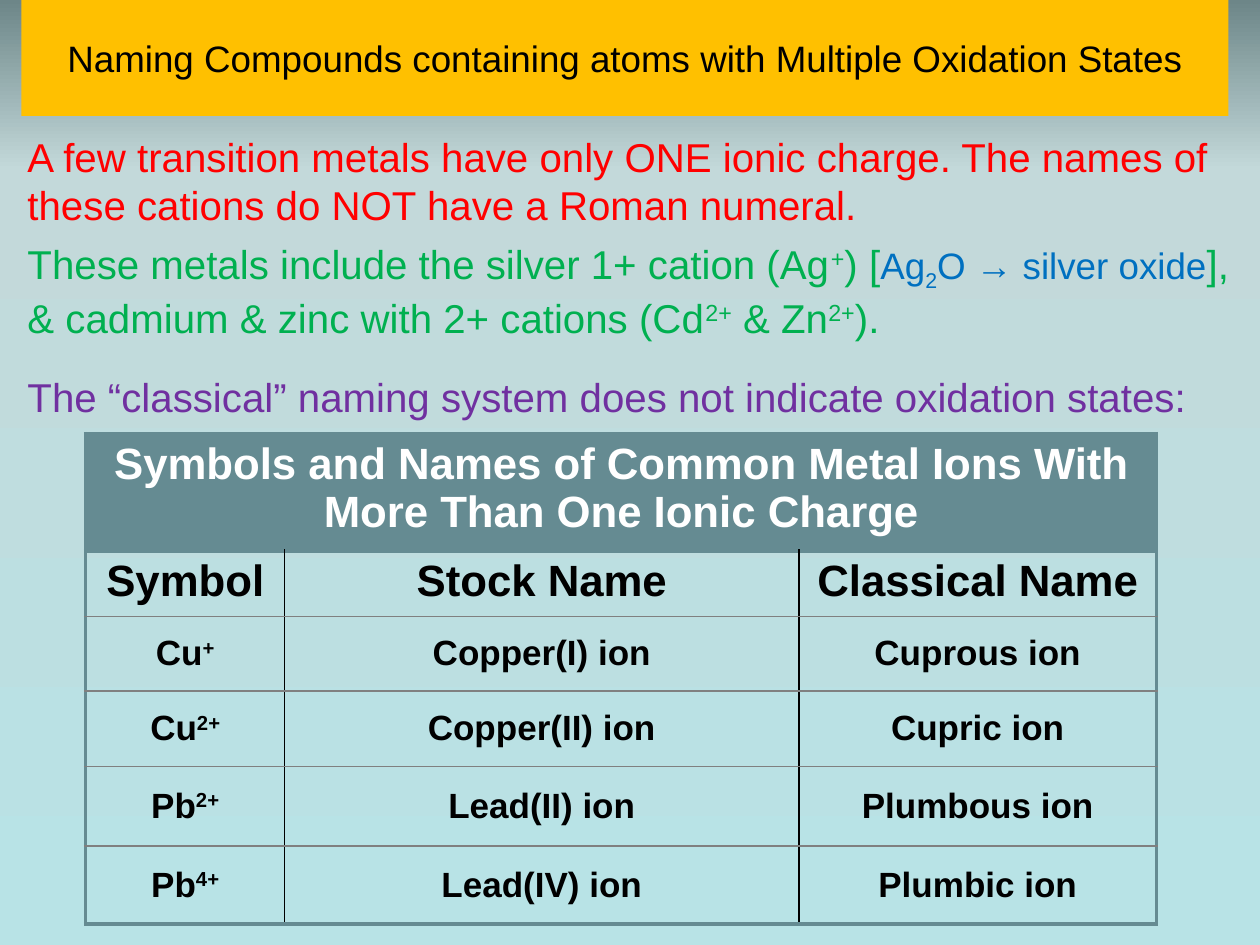
from copy import deepcopy

from lxml.etree import SubElement
from pptx import Presentation
from pptx.dml.color import RGBColor
from pptx.enum.text import MSO_ANCHOR, MSO_AUTO_SIZE, PP_ALIGN
from pptx.oxml.ns import qn
from pptx.util import Inches, Pt

COLORS = {
    "top": "6D8688", "haze": "C3D9DA", "base": "B8E3E6",
    "gold": "FFC000", "black": "000000", "white": "FFFFFF",
    "red": "FF0000", "green": "00B050", "blue": "0070C0",
    "purple": "7030A0", "teal": "658B92", "gray": "808080",
}
TITLE = "Naming Compounds containing atoms with Multiple Oxidation States"
UP, DOWN = 30, -25
BIG, SMALL = {"size": 23}, {"size": 21}
# Each paragraph: colour, space before, runs of (text, baseline, changes)
NOTES = [
    ("red", 0, [("A few transition metals have only ONE ionic charge. "
                 "The names of these cations do NOT have a Roman numeral.",)]),
    ("green", 6, [
        ("These metals include the silver 1+ cation (Ag",), ("+", UP), (") [",),
        ("Ag", 0, "blue"), ("2", DOWN, "blue"), ("O → silver oxide", 0, "blue"),
        ("], & cadmium & zinc with 2+ cations (Cd",), ("2+", UP),
        (" & Zn",), ("2+", UP), (").",)]),
    ("purple", 18, [("The “classical” naming system does not indicate "
                     "oxidation states:",)]),
]
HEAD = "Symbols and Names of Common Metal Ions With More Than One Ionic Charge"
LABELS = ["Symbol", "Stock Name", "Classical Name"]
IONS = [
    ("Cu", "+", "Copper(I) ion", "Cuprous ion"),
    ("Cu", "2+", "Copper(II) ion", "Cupric ion"),
    ("Pb", "2+", "Lead(II) ion", "Plumbous ion"),
    ("Pb", "4+", "Lead(IV) ion", "Plumbic ion"),
]
WIDTHS = [1.58, 4.08, 2.84]
HEIGHTS = [0.93, 0.52, 0.59, 0.6, 0.63, 0.62]


def rgb(name):
    return RGBColor.from_string(COLORS[name])


def add_run(para, text, color, base=0, **style):
    run = para.add_run()
    run.text = text
    for key, value in {"name": "Arial", "bold": False, **style}.items():
        setattr(run.font, key, Pt(value) if key == "size" else value)
    run.font.color.rgb = rgb(color)
    if base:
        run._r.get_or_add_rPr().set("baseline", str(base * 1000))


def paint_back(slide):
    """Fill the background with a three-stop gradient, top to bottom."""
    fill = slide.background.fill
    fill.gradient()
    fill.gradient_angle = 270
    stops = fill._fill._gradFill.find(qn("a:gsLst"))
    stops.append(deepcopy(stops[-1]))
    tints = [(0, "top"), (0.18, "haze"), (1, "base")]
    for stop, (spot, name) in zip(fill.gradient_stops, tints):
        stop.position = spot
        stop.color.rgb = rgb(name)


def set_title(slide):
    title = slide.shapes.title
    place = {"left": 0.17, "top": 0, "width": 9.58, "height": 0.92}
    for key, value in place.items():
        setattr(title, key, Inches(value))
    title.fill.solid()
    title.fill.fore_color.rgb = rgb("gold")
    frame = title.text_frame
    frame.auto_size = MSO_AUTO_SIZE.NONE
    frame.vertical_anchor = MSO_ANCHOR.MIDDLE
    para = frame.paragraphs[0]
    para.alignment = PP_ALIGN.CENTER
    add_run(para, TITLE, "black", **SMALL)


def add_notes(slide):
    box = slide.shapes.add_textbox(0, Inches(1), Inches(10), Inches(2.42))
    frame = box.text_frame
    frame.word_wrap = True
    for i, (color, gap, runs) in enumerate(NOTES):
        para = frame.add_paragraph() if i else frame.paragraphs[0]
        para.space_before = Pt(gap)
        para._p.get_or_add_pPr().set("marL", str(Inches(0.12)))
        for text, base, tint in (r + (0, color)[len(r) - 1:] for r in runs):
            size = SMALL if tint == "blue" else BIG
            add_run(para, text, tint, base, **size)


def set_edges(cell, edges):
    """Draw the cell borders; edges maps a side to a colour and a width."""
    props = cell._tc.get_or_add_tcPr()
    for i, side in enumerate("LRTB"):
        color, width = edges[side]
        line = SubElement(props, qn(f"a:ln{side}"), w=str(Pt(width)))
        paint = SubElement(line, qn("a:solidFill"))
        SubElement(paint, qn("a:srgbClr"), val=COLORS[color])
        props.insert(i, line)


def fill_cell(cell, runs, size, color="black"):
    para = cell.text_frame.paragraphs[0]
    para.alignment = PP_ALIGN.CENTER
    for text, base in runs:
        add_run(para, text, color, base, size=size, bold=True)


def add_grid(slide):
    rows, cols = len(HEIGHTS), len(WIDTHS)
    table = slide.shapes.add_table(
        rows, cols, Inches(0.68), Inches(3.44),
        Inches(sum(WIDTHS)), Inches(sum(HEIGHTS))).table
    table.first_row = table.horz_banding = False
    for col, width in zip(table.columns, WIDTHS):
        col.width = Inches(width)
    for row, height in zip(table.rows, HEIGHTS):
        row.height = Inches(height)

    frame, rule, split = ("teal", 2.25), ("gray", 1), ("black", 1)
    for r in range(rows):
        for c in range(cols):
            cell = table.cell(r, c)
            if r:
                cell.fill.background()
            else:
                cell.fill.solid()
                cell.fill.fore_color.rgb = rgb("teal")
            set_edges(cell, {
                "L": split if r and c else frame,
                "R": split if r and c < cols - 1 else frame,
                "T": rule if r > 1 else frame,
                "B": rule if 0 < r < rows - 1 else frame,
            })

    table.cell(0, 0).merge(table.cell(0, cols - 1))
    fill_cell(table.cell(0, 0), [(HEAD, 0)], 25, "white")
    for c, label in enumerate(LABELS):
        fill_cell(table.cell(1, c), [(label, 0)], 25)
    for r, (metal, charge, stock, classic) in enumerate(IONS, 2):
        texts = [[(metal, 0), (charge, UP)], [(stock, 0)], [(classic, 0)]]
        for c, runs in enumerate(texts):
            cell = table.cell(r, c)
            cell.vertical_anchor = MSO_ANCHOR.MIDDLE
            fill_cell(cell, runs, 20)


def main():
    deck = Presentation()
    deck.slide_width, deck.slide_height = Inches(10), Inches(7.5)
    slide = deck.slides.add_slide(deck.slide_layouts[5])
    paint_back(slide)
    set_title(slide)
    add_notes(slide)
    add_grid(slide)
    deck.save("out.pptx")


if __name__ == "__main__":
    main()
